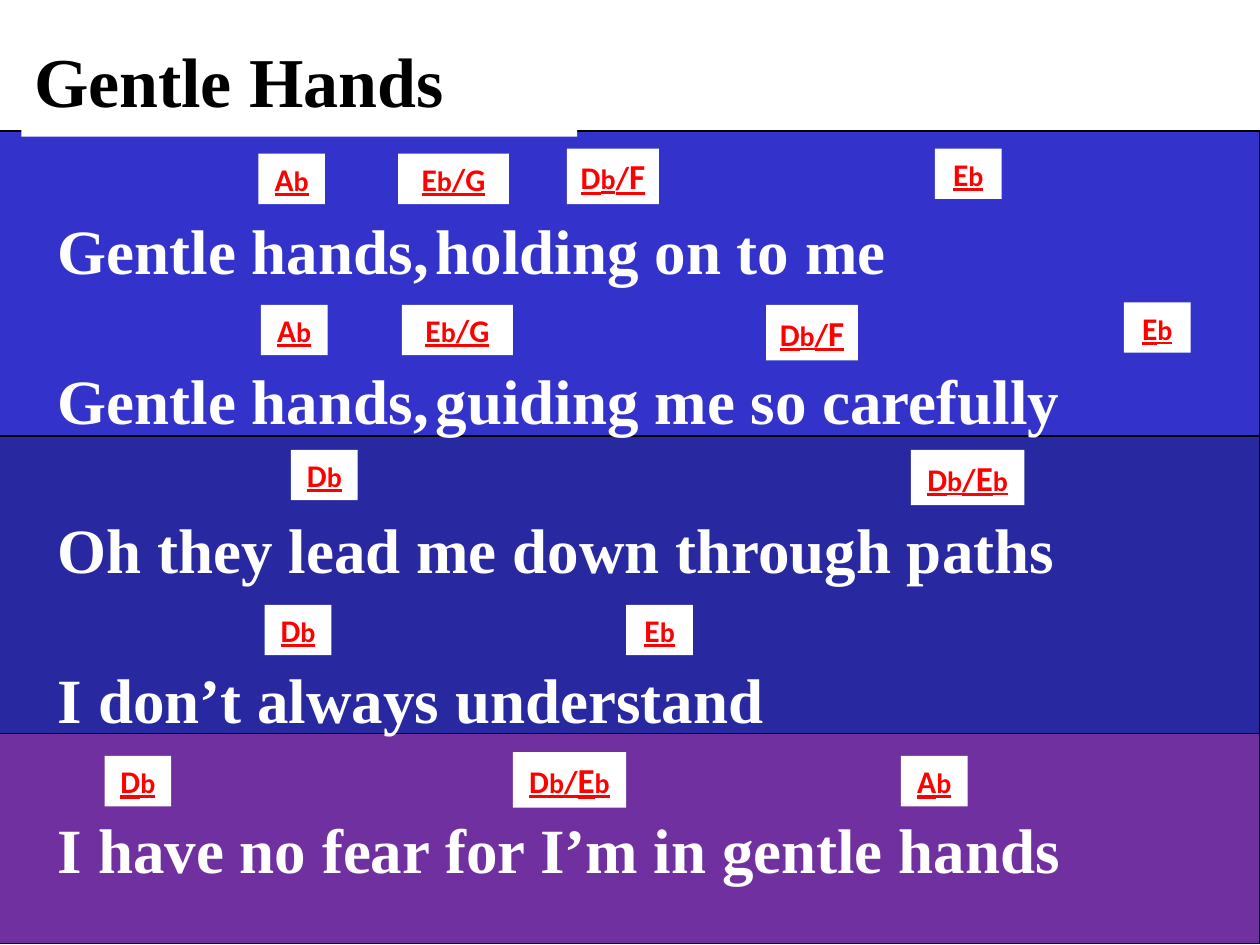
from pptx import Presentation
from pptx.dml.color import RGBColor
from pptx.enum.shapes import MSO_SHAPE
from pptx.enum.text import MSO_ANCHOR, MSO_AUTO_SIZE, PP_ALIGN
from pptx.oxml.xmlchemy import OxmlElement
from pptx.util import Inches, Pt

BLACK = RGBColor(0x00, 0x00, 0x00)
WHITE = RGBColor(0xFF, 0xFF, 0xFF)
RED = RGBColor(0xFF, 0x00, 0x00)
BLUE = RGBColor(0x33, 0x33, 0xCC)
NAVY = RGBColor(0x28, 0x28, 0xA0)
PURPLE = RGBColor(0x70, 0x30, 0xA0)

presentation = Presentation()
presentation.slide_width = Inches(10)
presentation.slide_height = Inches(7.5)
slide = presentation.slides.add_slide(presentation.slide_layouts[1])
title, lyrics = slide.placeholders


def add_rectangle(left, top, width, height, fill):
    shape = slide.shapes.add_shape(MSO_SHAPE.RECTANGLE, Inches(left), Inches(top),
                                   Inches(width), Inches(height))
    shape.shadow.inherit = False
    shape.fill.solid()
    shape.fill.fore_color.rgb = fill
    return shape


def add_run(paragraph, text, font_name, size, color):
    run = paragraph.add_run()
    run.text = text
    run.font.name = font_name
    run.font.size = Pt(size)
    run.font.bold = True
    run.font.color.rgb = color
    return run


# Coloured bands, one for each part of the verse
for top, height, color in [(1.04, 2.53, BLUE), (3.46, 2.51, NAVY), (5.82, 1.67, PURPLE)]:
    band = add_rectangle(-0.02, top, 10.02, height, color)
    band.line.color.rgb = BLACK
    band.line.width = Pt(0.75)

# Lyrics and title, brought in front of the bands
for placeholder, (left, top, width, height) in [(lyrics, (-0.02, 1.33, 10.02, 5.86)),
                                                (title, (0.17, 0.25, 4.41, 0.77))]:
    slide.shapes.element.append(placeholder.element)
    placeholder.left, placeholder.top = Inches(left), Inches(top)
    placeholder.width, placeholder.height = Inches(width), Inches(height)
    placeholder.text_frame.auto_size = MSO_AUTO_SIZE.SHAPE_TO_FIT_TEXT
    placeholder.text_frame.vertical_anchor = MSO_ANCHOR.TOP

title.fill.solid()
title.fill.fore_color.rgb = WHITE
heading = title.text_frame.paragraphs[0]
heading.alignment = PP_ALIGN.LEFT
add_run(heading, "Gentle Hands", "Times New Roman", 40, BLACK)

# Each line: its text and the tab stop of its second half, if any
lines = [
    ("Gentle hands,\tholding on to me", 4.44),
    ("Gentle hands,\tguiding me so carefully", 4.32),
    ("Oh they lead me down through paths", None),
    ("I don’t always understand", None),
    ("I have no fear for I’m in gentle hands", None),
]
for index, (text, tab_stop) in enumerate(lines):
    frame = lyrics.text_frame
    paragraph = frame.add_paragraph() if index else frame.paragraphs[0]
    paragraph.line_spacing = 1.5
    paragraph.space_before = Pt(20.7)
    properties = paragraph.element.get_or_add_pPr() if hasattr(paragraph, "element") else paragraph._p.get_or_add_pPr()
    properties.set("marL", str(Inches(0.38)))
    properties.set("indent", "0")
    properties.append(OxmlElement("a:buNone"))
    if tab_stop:
        tabs = OxmlElement("a:tabLst")
        tab = OxmlElement("a:tab")
        tab.set("pos", str(Inches(tab_stop)))
        tab.set("algn", "l")
        tabs.append(tab)
        properties.append(tabs)
    add_run(paragraph, text, "Times New Roman", 36, WHITE)

# Chord labels: width, height and sized runs of each chord
chords = {
    "Ab": (0.53, 0.4, [("A", 18), ("b", 16)]),
    "Db": (0.53, 0.4, [("D", 18), ("b", 16)]),
    "Eb": (0.53, 0.4, [("E", 18), ("b", 16)]),
    "Eb/G": (0.88, 0.4, [("E", 18), ("b", 16), ("/G", 18)]),
    "Db/F": (0.73, 0.44, [("D", 18), ("b", 16), ("/", 18), ("F", 20)]),
    "Db/Eb": (0.9, 0.44, [("D", 18), ("b", 16), ("/", 18), ("E", 20), ("b", 16)]),
}
chord_places = [
    ("Ab", 2.05, 1.22), ("Db", 2.31, 3.57), ("Eb", 7.42, 1.18), ("Eb/G", 3.16, 1.22),
    ("Db/Eb", 7.23, 3.57), ("Db/F", 4.5, 1.18), ("Ab", 2.07, 2.42), ("Eb", 8.92, 2.4),
    ("Eb/G", 3.19, 2.42), ("Db/F", 6.08, 2.42), ("Db", 2.1, 4.8), ("Eb", 4.97, 4.8),
    ("Db", 0.83, 6), ("Db/Eb", 4.07, 5.97), ("Ab", 7.15, 6),
]
for chord, left, top in chord_places:
    width, height, runs = chords[chord]
    label = add_rectangle(left, top, width, height, WHITE)
    label.line.fill.background()
    frame = label.text_frame
    frame.word_wrap = False
    frame.auto_size = MSO_AUTO_SIZE.SHAPE_TO_FIT_TEXT
    frame.vertical_anchor = MSO_ANCHOR.TOP
    paragraph = frame.paragraphs[0]
    paragraph.alignment = PP_ALIGN.CENTER
    for text, size in runs:
        add_run(paragraph, text, "Calibri", size, RED).font.underline = True

presentation.save("out.pptx")
